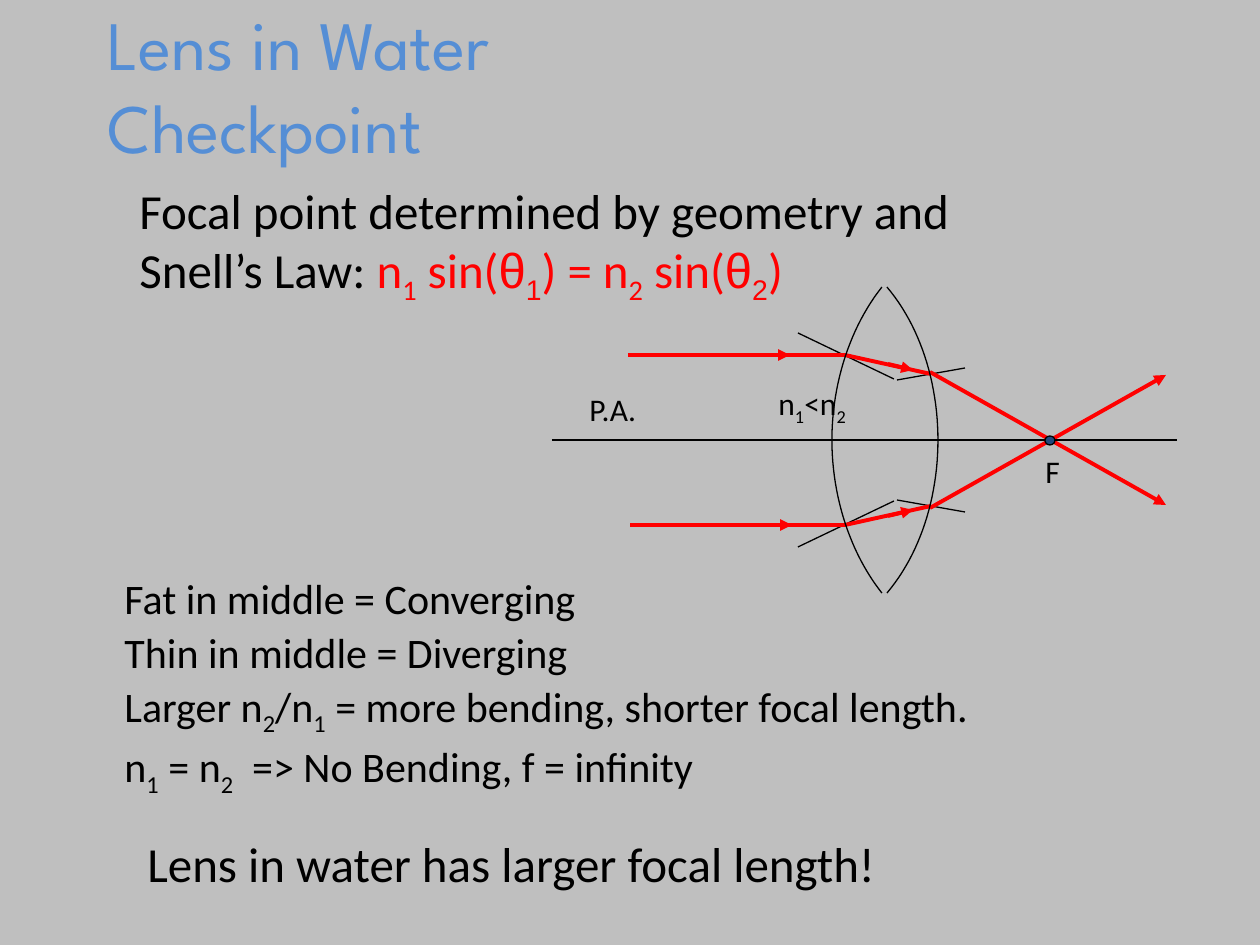
from lxml import etree
from pptx import Presentation
from pptx.dml.color import RGBColor
from pptx.enum.shapes import MSO_CONNECTOR, MSO_SHAPE
from pptx.enum.text import MSO_ANCHOR
from pptx.oxml.ns import qn
from pptx.util import Emu, Pt

STRAIGHT = MSO_CONNECTOR.STRAIGHT
ELLIPSE = MSO_SHAPE.OVAL
TOP, MIDDLE = MSO_ANCHOR.TOP, MSO_ANCHOR.MIDDLE
PX = 914400 / 126
BLACK, RED, BLUE = "000000", "FF0000", "558ED5"
AXIS_Y = 440

presentation = Presentation()
presentation.slide_width = Emu(round(1260 * PX))
presentation.slide_height = Emu(round(945 * PX))
slide = presentation.slides.add_slide(presentation.slide_layouts[6])
slide.background.fill.solid()
slide.background.fill.fore_color.rgb = RGBColor.from_string("BFBFBF")


def add_line(start, end, color, width, arrow=False):
    points = [round(value * PX) for value in (*start, *end)]
    line = slide.shapes.add_connector(STRAIGHT, *points)
    line.line.color.rgb = RGBColor.from_string(color)
    line.line.width = Pt(width)
    if arrow:
        outline = line.line._get_or_add_ln()
        etree.SubElement(outline, qn("a:tailEnd"), type="triangle")
    etree.SubElement(line._element.spPr, qn("a:effectLst"))


def add_text(box, paragraphs, size, font="Calibri", color=BLACK, space=0, anchor=TOP):
    shape = slide.shapes.add_textbox(*[round(value * PX) for value in box])
    frame = shape.text_frame
    frame.word_wrap = True
    frame.vertical_anchor = anchor
    for index, runs in enumerate(paragraphs):
        paragraph = frame.add_paragraph() if index else frame.paragraphs[0]
        paragraph.space_before = Pt(space)
        for text, *style in runs:
            if text == "\n":
                paragraph.add_line_break()
                continue
            run = paragraph.add_run()
            run.text = text
            run.font.size = Pt(size)
            run.font.name = "Arial" if "greek" in style else font
            run.font.color.rgb = RGBColor.from_string(RED if "red" in style else color)
            if "sub" in style:
                run.font._element.set("baseline", "-25000")


add_text((95, 5, 1071, 158), [[("Lens in Water",), ("\n",), ("Checkpoint",)]],
         39.6, "League Spartan", BLUE, anchor=MIDDLE)

for side, shift in ((1, 0), (-1, 2)):
    rays = [
        ((798, 333), (894, 379), BLACK, 0.75, False),
        ((897, 380), (965, 368), BLACK, 0.75, False),
        ((930, 372), (1166, 505), RED, 2.25, True),
        ((845, 355), (931, 374), RED, 2.25, False),
        ((888, 364), (913, 370), RED, 2.25, True),
        ((628 + shift, 355), (846, 355), RED, 2.25, False),
        ((765 + shift, 355), (790 + shift, 355), RED, 2.25, True),
    ]
    for (x1, y1), (x2, y2), color, width, arrow in rays:
        start = (x1, AXIS_Y + side * (y1 - AXIS_Y))
        end = (x2, AXIS_Y + side * (y2 - AXIS_Y))
        add_line(start, end, color, width, arrow)

for tip_x, control_x, middle_x in ((882, 851, 832), (887, 920, 938)):
    arc = []
    for step in range(-24, 25):
        t = 1 - abs(step) / 24
        x = ((1 - t) ** 3 * tip_x + 3 * (1 - t) ** 2 * t * control_x
             + 3 * (1 - t) * t ** 2 * middle_x + t ** 3 * middle_x)
        rise = (1 - t) ** 3 * 153 + 3 * (1 - t) ** 2 * t * 114 + 3 * (1 - t) * t ** 2 * 58
        y = AXIS_Y + (rise if step > 0 else -rise)
        arc.append((round(x * PX), round(y * PX)))
    builder = slide.shapes.build_freeform(*arc[0])
    builder.add_line_segments(arc[1:], close=False)
    surface = builder.convert_to_shape()
    surface.shadow.inherit = False
    surface.fill.background()
    surface.line.color.rgb = RGBColor.from_string(BLACK)
    surface.line.width = Pt(0.75)

add_line((552, AXIS_Y), (1177, AXIS_Y), BLACK, 1.5)
focus = slide.shapes.add_shape(ELLIPSE, *[round(value * PX) for value in (1045, 436, 10, 9)])
focus.shadow.inherit = False
focus.fill.solid()
focus.fill.fore_color.rgb = RGBColor.from_string("1F497D")
focus.line.color.rgb = RGBColor.from_string(BLACK)
focus.line.width = Pt(0.75)

add_text((577, 384, 222, 63), [[("P.A.",)]], 18)
add_text((1033, 446, 40, 63), [[("F",)]], 18)
add_text((766, 378, 193, 63), [[("n",), ("1", "sub"), ("<n",), ("2", "sub")]], 18)

add_text((127, 174, 959, 131), [[
    ("Focal point determined by geometry and Snell’s Law: ",),
    ("n", "red"), ("1", "red", "sub"), (" sin(", "red"),
    ("θ", "red", "greek"), ("1", "red", "greek", "sub"),
    (") = n", "red"), ("2", "red", "sub"), (" sin(", "red"),
    ("θ", "red", "greek"), ("2", "red", "greek", "sub"), (")", "red"),
]], 28)

add_text((112, 566, 1038, 232), [
    [("Fat in middle = Converging",)],
    [("Thin in middle = Diverging",)],
    [("Larger n",), ("2", "sub"), ("/n",), ("1", "sub"),
     (" = more bending, shorter focal length.",)],
    [("n",), ("1", "sub"), (" = n",), ("2", "sub"), ("  => No Bending, f = infinity",)],
], 24, space=2)

add_text((135, 827, 951, 72), [[("Lens in water has larger focal length!",)]], 28)

presentation.save("out.pptx")
